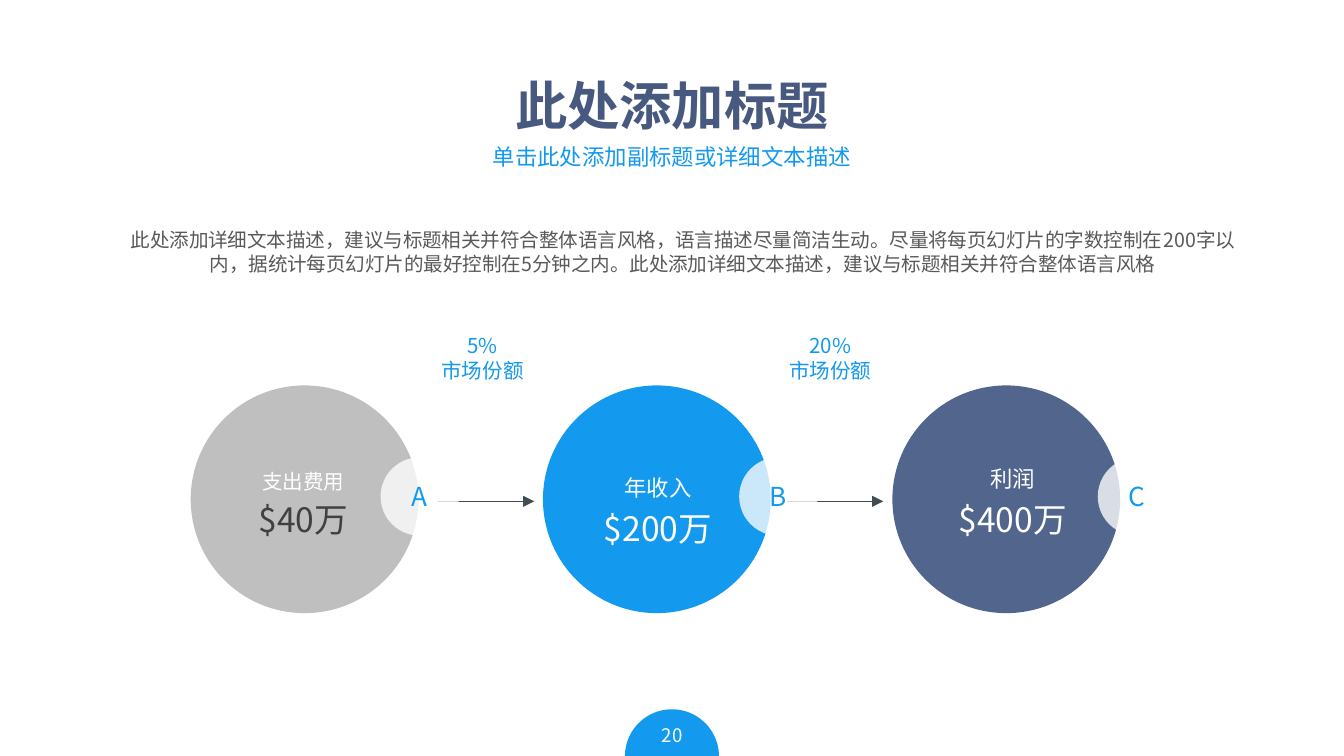
from lxml.etree import SubElement
from pptx import Presentation
from pptx.dml.color import RGBColor
from pptx.enum.shapes import MSO_CONNECTOR as Connector, MSO_SHAPE as Shape
from pptx.enum.text import MSO_ANCHOR as Anchor, PP_ALIGN as Align
from pptx.oxml.ns import qn
from pptx.util import Pt

FONT = "Noto Sans CJK SC"
BLUE, NAVY, GRAY, WHITE = "1399EE", "52658D", "BFBFBF", "FFFFFF"
TITLE = "此处添加标题"
SUBTITLE = "单击此处添加副标题或详细文本描述"
BODY = (
    "此处添加详细文本描述，建议与标题相关并符合整体语言风格，语言描述尽量简洁生动。"
    "尽量将每页幻灯片的字数控制在200字以内，据统计每页幻灯片的最好控制在5分钟之内。"
    "此处添加详细文本描述，建议与标题相关并符合整体语言风格"
)
PAGE_NUMBER = "20"
STAGES = [
    dict(name="支出费用", size=11, value="$40万", ink="404040", fill=GRAY,
         left=102.2, name_top=247.7, value_top=263.5, badge="A"),
    dict(name="年收入", size=12, value="$200万", ink=WHITE, fill=BLUE,
         left=290.9, name_top=250.6, value_top=268.6, badge="B"),
    dict(name="利润", size=12, value="$400万", ink=WHITE, fill=NAVY,
         left=478.1, name_top=245.5, value_top=263.5, badge="C"),
]
SHARES = [
    ("5%\v市场份额", 185.8, 234.7),
    ("20%\n市场份额", 372.2, 421.7),
]
CIRCLE, CIRCLE_TOP = 122, 206.5
BADGE, BADGE_LEFT, BADGE_STEP, BADGE_TOP = 42, 203.9, 192.1, 245
TEXT_CENTER, TEXT_STEP = 162.5, 190
ARROW_Y, ARROW_LENGTH = 268.6, 51.5


def color(code):
    return RGBColor.from_string(code)


def write(frame, text, size, ink, bold=False):
    frame.text = text
    for para in frame.paragraphs:
        para.alignment = Align.CENTER
        font = para.font
        font.size, font.bold, font.name = Pt(size), bold, FONT
        font.color.rgb = color(ink)
        SubElement(font._element, qn("a:ea")).set("typeface", FONT)


def add_text(page, text, left, top, width, height, size, ink, bold=False,
             anchor=Anchor.TOP):
    box = page.shapes.add_textbox(Pt(left), Pt(top), Pt(width), Pt(height))
    frame = box.text_frame
    frame.word_wrap = True
    frame.vertical_anchor = anchor
    write(frame, text, size, ink, bold)
    return frame


def add_round(page, kind, left, top, size, fill):
    shape = page.shapes.add_shape(kind, Pt(left), Pt(top), Pt(size), Pt(size))
    shape.shadow.inherit = False
    shape.fill.solid()
    shape.fill.fore_color.rgb = color(fill)
    shape.line.fill.background()
    return shape


def add_arrow(page, left):
    arrow = page.shapes.add_connector(
        Connector.STRAIGHT, Pt(left), Pt(ARROW_Y), Pt(left + ARROW_LENGTH), Pt(ARROW_Y))
    arrow.line.color.rgb = color("424C53")
    arrow.line.width = Pt(0.75)
    SubElement(arrow.line._get_or_add_ln(), qn("a:tailEnd")).set("type", "triangle")
    SubElement(arrow._element.spPr, qn("a:effectLst"))


def add_share(page, text, left):
    frame = add_text(page, text, left, 178.6, 138.2, 26.6, 11, BLUE)
    frame.margin_left = frame.margin_right = frame.margin_top = frame.margin_bottom = 0
    for para in frame.paragraphs:
        para._p.get_or_add_pPr().set("marL", str(Pt(7.2)))


def add_badge(page, letter, left):
    badge = add_round(page, Shape.OVAL, left, BADGE_TOP, BADGE, WHITE)
    fill = badge._element.spPr.find(qn("a:solidFill"))
    SubElement(fill[0], qn("a:alpha")).set("val", "78000")
    badge.text_frame.vertical_anchor = Anchor.MIDDLE
    write(badge.text_frame, letter, 14, BLUE)


def main():
    deck = Presentation()
    deck.slide_width, deck.slide_height = Pt(720), Pt(405)
    page = deck.slides.add_slide(deck.slide_layouts[6])

    tab = add_round(page, Shape.PIE, 334.8, 380, 50.4, BLUE)
    tab.adjustments[0], tab.adjustments[1] = 108, 0
    add_text(page, PAGE_NUMBER, 344.9, 383, 30.2, 21.6, 10, WHITE, anchor=Anchor.MIDDLE)

    for index, stage in enumerate(STAGES):
        center = TEXT_CENTER + index * TEXT_STEP
        add_round(page, Shape.OVAL, stage["left"], CIRCLE_TOP, CIRCLE, stage["fill"])
        add_text(page, stage["name"], center - 75, stage["name_top"], 150, 21,
                 stage["size"], WHITE)
        add_text(page, stage["value"], center - 44, stage["value_top"], 88, 29,
                 18, stage["ink"])

    for text, label_left, arrow_left in SHARES:
        add_arrow(page, arrow_left)
        add_share(page, text, label_left)

    for index, stage in enumerate(STAGES):
        add_badge(page, stage["badge"], BADGE_LEFT + index * BADGE_STEP)

    add_text(page, BODY, 59.8, 118.8, 612, 54, 10.5, "595959")
    add_text(page, TITLE, 36, 22.3, 648, 67.7, 28, "48597F", True, Anchor.MIDDLE)
    subtitle = add_text(page, SUBTITLE, 162, 69.1, 396, 25.2, 12, BLUE)
    subtitle.paragraphs[0].line_spacing = Pt(18.2)

    deck.save("out.pptx")


if __name__ == "__main__":
    main()
